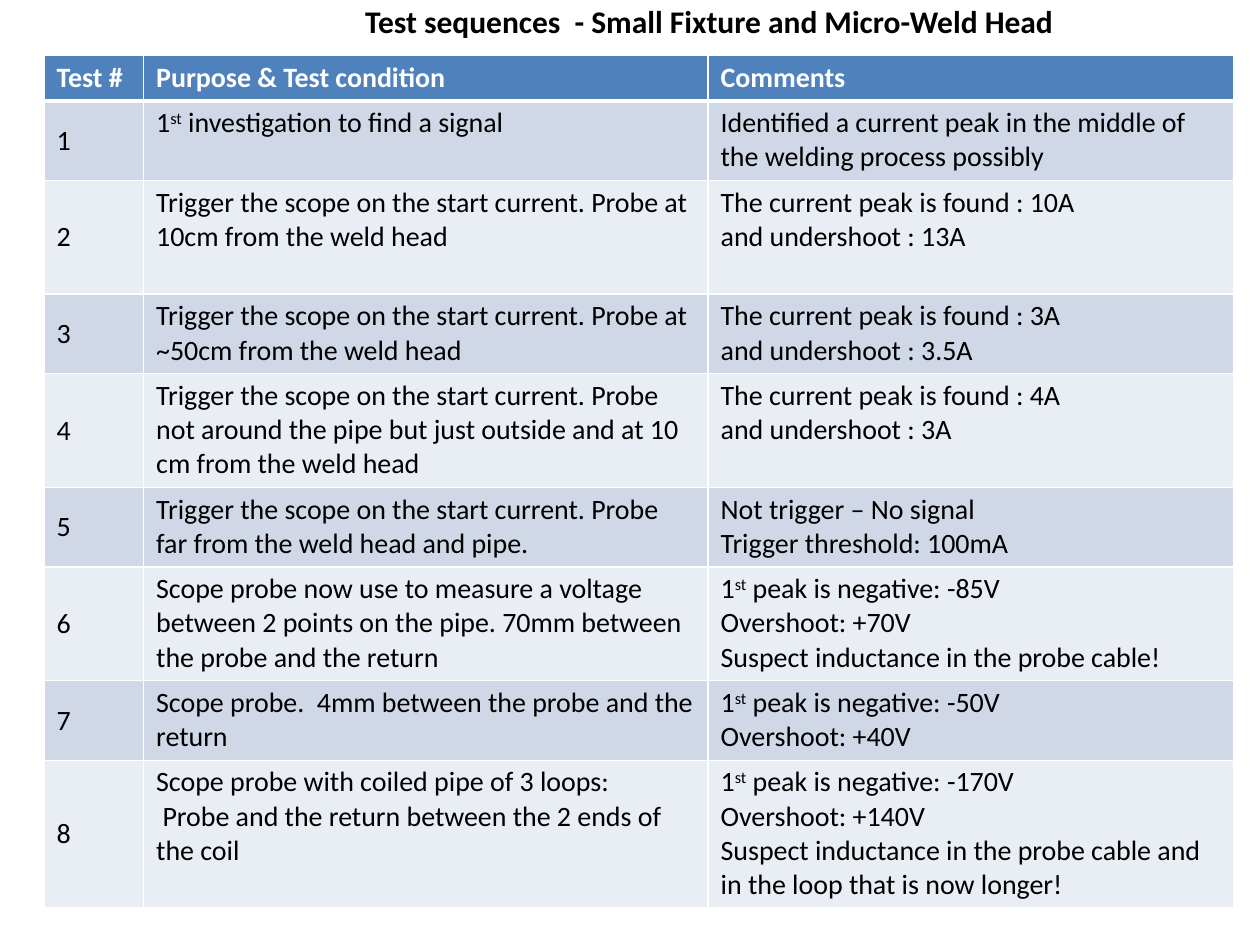
from dataclasses import dataclass

from lxml.etree import SubElement
from pptx import Presentation
from pptx.dml.color import RGBColor
from pptx.enum.text import MSO_ANCHOR
from pptx.oxml.ns import qn
from pptx.util import Inches, Pt


@dataclass(frozen=True)
class Theme:
    """Colours, font and type sizes of the slide."""
    font: str = "Calibri"
    title: int = 18
    body: int = 16
    black: str = "000000"
    white: str = "FFFFFF"
    head: str = "4F81BD"
    bands: tuple = ("E9EDF4", "D0D8E8")


THEME = Theme()
TITLE = "Test sequences  - Small Fixture and Micro-Weld Head"
HEADS = ("Test #", "Purpose & Test condition", "Comments")
WIDTHS = (0.79, 4.48, 4.17)
TRIGGER = "Trigger the scope on the start current. Probe "
TESTS = (
    (2, "1st investigation to find a signal",
     "Identified a current peak in the middle of the welding process possibly"),
    (3, TRIGGER + "at 10cm from the weld head",
     "The current peak is found : 10A\nand undershoot : 13A"),
    (2, TRIGGER + "at ~50cm from the weld head",
     "The current peak is found : 3A\nand undershoot : 3.5A"),
    (3, TRIGGER + "not around the pipe but just outside and at 10 cm from the weld head",
     "The current peak is found : 4A\nand undershoot : 3A"),
    (2, TRIGGER + "far from the weld head and pipe.",
     "Not trigger – No signal\nTrigger threshold: 100mA"),
    (3, "Scope probe now use to measure a voltage between 2 points on the pipe. "
        "70mm between the probe and the return",
     "1st peak is negative: -85V\nOvershoot: +70V\nSuspect inductance in the probe cable!"),
    (2, "Scope probe.  4mm between the probe and the return",
     "1st peak is negative: -50V\nOvershoot: +40V"),
    (4, "Scope probe with coiled pipe of 3 loops:\n"
        " Probe and the return between the 2 ends of the coil",
     "1st peak is negative: -170V\nOvershoot: +140V\n"
     "Suspect inductance in the probe cable and in the loop that is now longer!"),
)


def style(run, size, color, bold):
    """Set the font of one run."""
    font = run.font
    font.name, font.size, font.bold = THEME.font, Pt(size), bold
    font.color.rgb = RGBColor.from_string(color)


def write(frame, text, size, color, bold=False):
    """Write lines of text, raising the ordinal suffix of a leading 1st."""
    frame.text = text
    for para in frame.paragraphs:
        line = para.text
        if line.startswith("1st"):
            para.runs[0].text = "1"
            suffix = para.add_run()
            suffix.text = "st"
            suffix._r.get_or_add_rPr().set("baseline", "30000")
            para.add_run().text = line[3:]
        for run in para.runs:
            style(run, size, color, bold)


def border(cell, bottom):
    """Draw white borders around a cell."""
    props = cell._tc.get_or_add_tcPr()
    for side, width in (("L", 1), ("R", 1), ("T", 1), ("B", bottom)):
        line = SubElement(props, qn("a:ln" + side), w=str(Pt(width)))
        paint = SubElement(line, qn("a:solidFill"))
        SubElement(paint, qn("a:srgbClr"), val=THEME.white)


def dress(cell, text, fill, color, head=False):
    """Fill one table cell with its text, colour and borders."""
    cell.margin_top = cell.margin_bottom = Inches(0.04)
    write(cell.text_frame, text, THEME.body, color, head)
    border(cell, 3 if head else 1)
    cell.fill.solid()
    cell.fill.fore_color.rgb = RGBColor.from_string(fill)


def heading(slide, left, top, width, height):
    """Place the slide title."""
    box = slide.shapes.add_textbox(left, top, width, height)
    box.text_frame.word_wrap = False
    write(box.text_frame, TITLE, THEME.title, THEME.black, True)


def tests(slide, left, top, width, height):
    """Place the table of tests, with row heights set by line counts."""
    rows = len(TESTS) + 1
    table = slide.shapes.add_table(rows, len(HEADS), left, top, width, height).table
    for column, size in zip(table.columns, WIDTHS):
        column.width = Inches(size)
    counts = [1] + [test[0] for test in TESTS]
    pad = Inches(0.09)
    step = (height - pad * rows) / sum(counts)
    for row, count in zip(table.rows, counts):
        row.height = int(pad + step * count)
    for col, text in enumerate(HEADS):
        dress(table.cell(0, col), text, THEME.head, THEME.white, True)
    for num, (_, purpose, comment) in enumerate(TESTS, 1):
        for col, text in enumerate((str(num), purpose, comment)):
            dress(table.cell(num, col), text, THEME.bands[num % 2], THEME.black)
        table.cell(num, 0).vertical_anchor = MSO_ANCHOR.MIDDLE


def main():
    """Build and save the slide."""
    deck = Presentation()
    deck.slide_width, deck.slide_height = Inches(10), Inches(7.5)
    slide = deck.slides.add_slide(deck.slide_layouts[6])
    heading(slide, Inches(2.8), Inches(-0.03), Inches(5.7), Inches(0.4))
    tests(slide, Inches(0.35), Inches(0.44), Inches(sum(WIDTHS)), Inches(6.77))
    deck.save("out.pptx")


if __name__ == "__main__":
    main()
